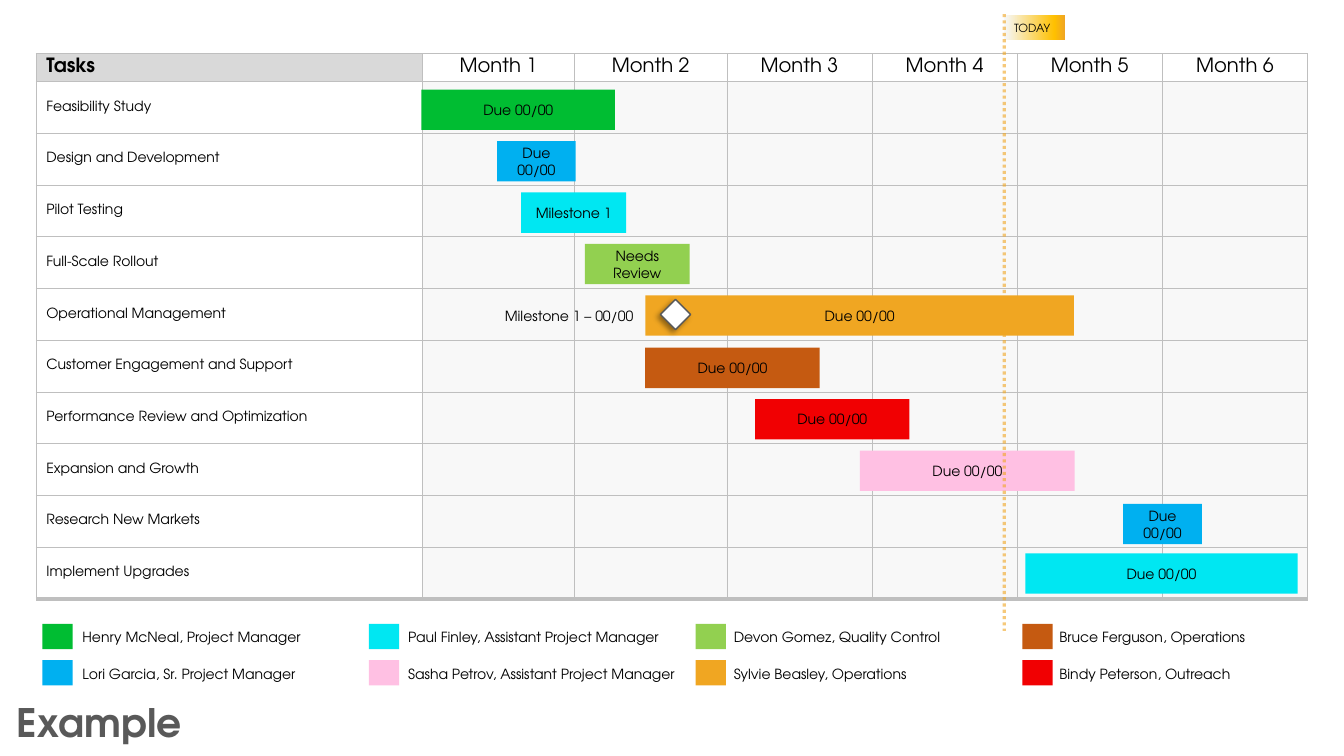
from lxml.etree import SubElement
from pptx import Presentation
from pptx.dml.color import RGBColor
from pptx.enum.dml import MSO_LINE
from pptx.enum.shapes import MSO_CONNECTOR, MSO_SHAPE
from pptx.enum.text import MSO_ANCHOR, MSO_AUTO_SIZE, PP_ALIGN
from pptx.oxml import parse_xml
from pptx.oxml.ns import nsdecls, qn
from pptx.util import Emu, Pt

BLACK = RGBColor(0x00, 0x00, 0x00)
WHITE = RGBColor(0xFF, 0xFF, 0xFF)
GRID = RGBColor(0xBF, 0xBF, 0xBF)
HEADER = RGBColor(0xD9, 0xD9, 0xD9)
PALE = RGBColor(0xF2, 0xF2, 0xF2)
SLATE = RGBColor(0x59, 0x59, 0x59)
GREEN = RGBColor(0x00, 0xBD, 0x32)
BLUE = RGBColor(0x00, 0xB0, 0xF0)
CYAN = RGBColor(0x00, 0xE7, 0xF2)
PINK = RGBColor(0xFF, 0xC0, 0xE3)
LIME = RGBColor(0x92, 0xD0, 0x50)
AMBER = RGBColor(0xF0, 0xA6, 0x22)
RUST = RGBColor(0xC5, 0x5A, 0x11)
RED = RGBColor(0xF1, 0x00, 0x02)
GOLD = RGBColor(0xFF, 0xC0, 0x00)
MIST = RGBColor(0xF6, 0xF8, 0xFC)

FONT = "TeX Gyre Adventor"
SCALE = 9144

TASKS = ["Feasibility Study", "Design and Development", "Pilot Testing",
         "Full-Scale Rollout", "Operational Management",
         "Customer Engagement and Support", "Performance Review and Optimization",
         "Expansion and Growth", "Research New Markets", "Implement Upgrades"]
MONTHS = [f"Month {number}" for number in range(1, 7)]
COLUMNS = [383, 151, 151, 144, 144, 144, 144]
BARS = [(0, 418, 192, GREEN, "Due 00/00"), (1, 493, 78, BLUE, "Due 00/00"),
        (2, 517, 104, CYAN, "Milestone 1"), (3, 580, 104, LIME, "Needs Review"),
        (4, 640, 425, AMBER, "Due 00/00"), (5, 640, 173, RUST, "Due 00/00"),
        (6, 749, 153, RED, "Due 00/00"), (7, 853, 213, PINK, "Due 00/00"),
        (9, 1017, 270, CYAN, "Due 00/00")]
OWNERS = [(GREEN, "Henry McNeal, Project Manager"),
          (BLUE, "Lori Garcia, Sr. Project Manager"),
          (CYAN, "Paul Finley, Assistant Project Manager"),
          (PINK, "Sasha Petrov, Assistant Project Manager"),
          (LIME, "Devon Gomez, Quality Control"),
          (AMBER, "Sylvie Beasley, Operations"),
          (RUST, "Bruce Ferguson, Operations"),
          (RED, "Bindy Peterson, Outreach")]


def px(length):
    return Emu(length * SCALE)


def set_opacity(color_element, percent):
    SubElement(color_element, qn("a:alpha"), val=str(percent * 1000))


class GanttSlide:
    def __init__(self, slide):
        self.shapes = slide.shapes

    def add_text(self, frame, text, size=10, color=BLACK, bold=False, align=PP_ALIGN.LEFT):
        paragraph = frame.paragraphs[0]
        paragraph.alignment = align
        run = paragraph.add_run()
        run.text = text
        run.font.name = FONT
        run.font.size = Pt(size)
        run.font.bold = bold
        run.font.color.rgb = color

    def block(self, x, y, width, height, color, kind=MSO_SHAPE.RECTANGLE, shapes=None):
        parent = self.shapes if shapes is None else shapes
        block = parent.add_shape(kind, px(x), px(y), px(width), px(height))
        block.shadow.inherit = False
        block.fill.solid()
        block.fill.fore_color.rgb = color
        block.line.fill.background()
        return block

    def bar(self, x, y, width, color, text):
        frame = self.block(x, y, width, 40, color).text_frame
        frame.word_wrap = True
        frame.vertical_anchor = MSO_ANCHOR.MIDDLE
        self.add_text(frame, text, align=PP_ALIGN.CENTER)

    def label(self, x, y, width, height, text, middle=False, **style):
        frame = self.shapes.add_textbox(px(x), px(y), px(width), px(height)).text_frame
        frame.word_wrap = True
        if middle:
            frame.vertical_anchor = MSO_ANCHOR.MIDDLE
        else:
            frame.auto_size = MSO_AUTO_SIZE.SHAPE_TO_FIT_TEXT
        self.add_text(frame, text, **style)

    def style_cell(self, cell, color, opacity=100, bottom=0.5):
        cell.margin_top = cell.margin_bottom = 0
        cell.vertical_anchor = MSO_ANCHOR.MIDDLE
        cell.fill.solid()
        cell.fill.fore_color.rgb = color
        properties = cell._tc.get_or_add_tcPr()
        if opacity < 100:
            set_opacity(properties.find(".//" + qn("a:srgbClr")), opacity)
        for index, side in enumerate("LRTB"):
            width = Pt(bottom if side == "B" else 0.5)
            properties.insert(index, parse_xml(
                f'<a:ln{side} {nsdecls("a")} w="{width}"><a:solidFill>'
                f'<a:srgbClr val="{GRID}"/></a:solidFill></a:ln{side}>'))

    def schedule(self, x, y, header_height, body_height):
        table = self.shapes.add_table(
            len(TASKS) + 1, len(COLUMNS), px(x), px(y),
            px(sum(COLUMNS)), px(header_height + body_height)).table
        table.first_row = table.horz_banding = False
        for column, width in zip(table.columns, COLUMNS):
            column.width = px(width)
        for row in table.rows:
            row.height = px(body_height) // len(TASKS)
        table.rows[0].height = px(header_height)
        for column, heading in enumerate(["Tasks"] + MONTHS):
            cell = table.cell(0, column)
            first = column == 0
            self.style_cell(cell, HEADER if first else WHITE, 100 if first else 75)
            self.add_text(cell.text_frame, heading, 14, bold=first,
                          align=PP_ALIGN.LEFT if first else PP_ALIGN.CENTER)
        for row, task in enumerate(TASKS, 1):
            bottom = 3 if row == len(TASKS) else 0.5
            self.style_cell(table.cell(row, 0), WHITE, bottom=bottom)
            self.add_text(table.cell(row, 0).text_frame, task)
            for column in range(1, len(COLUMNS)):
                self.style_cell(table.cell(row, column), PALE, 50, bottom)

    def today_marker(self, x, top, bottom):
        marker = self.shapes.add_group_shape().shapes
        flag = self.block(x, top + 1, 60, 25, GOLD, shapes=marker)
        flag.fill.gradient()
        flag.fill.gradient_angle = 0
        stops = flag._element.spPr.find(".//" + qn("a:gsLst"))
        stops.clear()
        for position, color in [(0, MIST), (83, GOLD), (100, AMBER)]:
            stop = SubElement(stops, qn("a:gs"), pos=str(position * 1000))
            SubElement(stop, qn("a:srgbClr"), val=str(color))
        flag.text_frame.vertical_anchor = MSO_ANCHOR.MIDDLE
        self.add_text(flag.text_frame, "TODAY", 8)
        rule = marker.add_connector(MSO_CONNECTOR.STRAIGHT, px(x), px(top), px(x), px(bottom))
        rule.line.color.rgb = AMBER
        rule.line.width = Pt(2.25)
        rule.line.dash_style = MSO_LINE.ROUND_DOT
        properties = rule._element.spPr
        set_opacity(properties.find(".//" + qn("a:srgbClr")), 60)
        SubElement(properties, qn("a:effectLst"))

    def milestone(self, x, y, size):
        diamond = self.block(x, y, size, size, WHITE, MSO_SHAPE.DIAMOND)
        diamond.line.color.rgb = SLATE
        diamond.line.width = Pt(1)
        effects = diamond._element.spPr.find(qn("a:effectLst"))
        shadow = SubElement(effects, qn("a:outerShdw"), blurRad=str(Pt(4)),
                            dist=str(Pt(3)), dir=str(135 * 60000), rotWithShape="0")
        set_opacity(SubElement(shadow, qn("a:srgbClr"), val=str(BLACK)), 40)


def main():
    deck = Presentation()
    deck.slide_width, deck.slide_height = px(1333), px(750)
    gantt = GanttSlide(deck.slides.add_slide(deck.slide_layouts[6]))
    gantt.schedule(36, 53, 28, 513)
    for row, x, width, color, text in BARS:
        gantt.bar(x, 89 + round(51.1 * row), width, color, text)
    for index, (color, owner) in enumerate(OWNERS):
        column, row = divmod(index, 2)
        y = 619 + 36 * row
        gantt.block(42 + 324 * column, y, 30, 25, color)
        gantt.label(72 + 323 * column, y, 292 if column == 1 else 240, 27, owner)
    gantt.today_marker(996, 14, 626)
    gantt.milestone(655, 297, 30)
    gantt.label(421, 293, 217, 40, "Milestone 1 – 00/00", middle=True, align=PP_ALIGN.RIGHT)
    gantt.bar(1114, 500, 78, BLUE, "Due 00/00")
    gantt.label(7, 688, 900, 57, "Example", size=28, color=SLATE, bold=True)
    deck.save("out.pptx")


if __name__ == "__main__":
    main()
